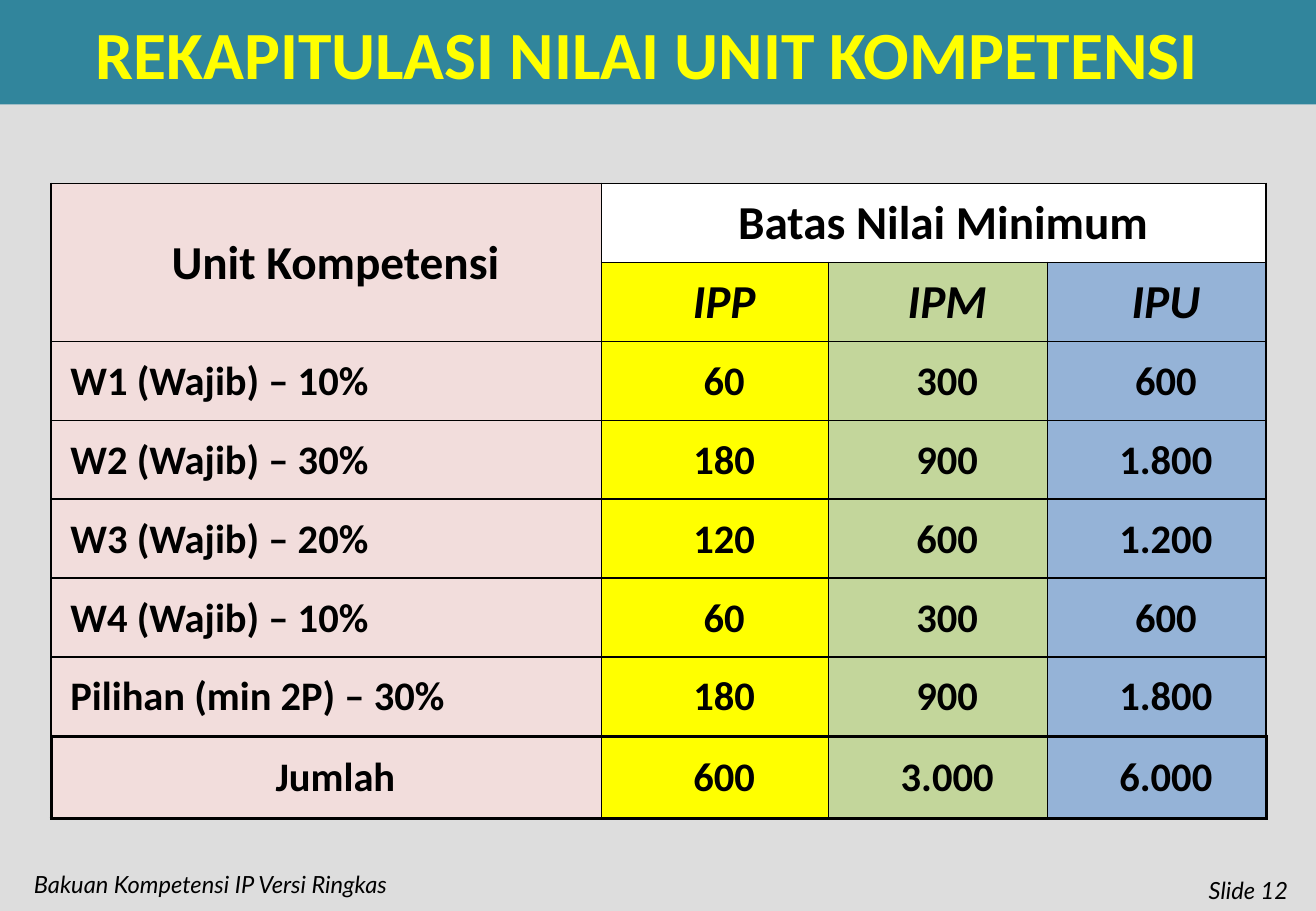
from lxml import etree
from pptx import Presentation
from pptx import util as u
from pptx.dml.color import RGBColor
from pptx.enum import shapes, text
from pptx.oxml.ns import qn

PX = 9144  # EMU per px, 100 px to the inch
COLORS = {
    "page": "DDDDDD", "band": "31859C", "title": "FFFF00", "ink": "000000",
    "unit": "F2DDDC", "head": "FFFFFF", "ipp": "FFFF00", "ipm": "C3D69B", "ipu": "95B3D7",
}
COL_COLORS = ["unit", "ipp", "ipm", "ipu"]
COL_WIDTHS = [453, 187, 180, 180]
ROW_HEIGHTS = [65] * 7 + [68]
ROWS = [
    ["Unit Kompetensi", "Batas Nilai Minimum", "", ""],
    ["", "IPP", "IPM", "IPU"],
    ["W1 (Wajib) – 10%", "60", "300", "600"],
    ["W2 (Wajib) – 30%", "180", "900", "1.800"],
    ["W3 (Wajib) – 20%", "120", "600", "1.200"],
    ["W4 (Wajib) – 10%", "60", "300", "600"],
    ["Pilihan (min 2P) – 30%", "180", "900", "1.800"],
    ["Jumlah", "600", "3.000", "6.000"],
]
HEAD_ROWS = 2
ALIGN = text.PP_ALIGN


def px(*values):
    return [u.Emu(v * PX) for v in values]


def rgb(name):
    return RGBColor.from_string(COLORS[name])


def write(tf, words, size, font, color="ink", align=ALIGN.LEFT, bold=False, italic=False):
    tf.text = words
    tf.word_wrap = True
    p = tf.paragraphs[0]
    p.alignment = align
    for r in p.runs:
        f = r.font
        f.size, f.name, f.bold, f.italic = u.Pt(size), font, bold, italic
        f.color.rgb = rgb(color)


def add_title(slide, box):
    x, y, w, h = box
    # Band
    sp = slide.shapes.add_shape(shapes.MSO_SHAPE.RECTANGLE, *px(x, y, w, h))
    sp.shadow.inherit = False
    sp.fill.solid()
    sp.fill.fore_color.rgb = rgb("band")
    sp.line.fill.background()
    # Heading
    tb = slide.shapes.add_textbox(*px(x + 69, y + 5, 953, h - 9))
    write(tb.text_frame, "REKAPITULASI NILAI UNIT KOMPETENSI", 40, "Calibri", "title", bold=True)


def set_borders(cell, widths):
    tc_pr = cell._tc.get_or_add_tcPr()
    for side in "LRTB":
        ln = etree.SubElement(tc_pr, qn(f"a:ln{side}"), w=str(u.Pt(widths[side])))
        fill = etree.SubElement(ln, qn("a:solidFill"))
        etree.SubElement(fill, qn("a:srgbClr"), val=COLORS["ink"])


def border_widths(row, col):
    total = len(ROWS) - 1
    return {
        "L": 2 if row == total and col == 0 else 1,
        "R": 2 if row == total and col == len(COL_WIDTHS) - 1 else 1,
        "T": 2 if row == total else 1,
        "B": 2 if row >= total - 1 else 1,
    }


def add_scores(slide, box):
    table = slide.shapes.add_table(len(ROWS), len(COL_WIDTHS), *px(*box)).table
    table.first_row = table.horz_banding = False
    for column, width in zip(table.columns, px(*COL_WIDTHS)):
        column.width = width
    for row, height in zip(table.rows, px(*ROW_HEIGHTS)):
        row.height = height

    # Cells
    for i, words in enumerate(ROWS):
        for j, word in enumerate(words):
            cell = table.cell(i, j)
            set_borders(cell, border_widths(i, j))
            cell.fill.solid()
            cell.fill.fore_color.rgb = rgb("head" if i == 0 and j else COL_COLORS[j])
            cell.vertical_anchor = text.MSO_ANCHOR.MIDDLE
            cell.margin_left, cell.margin_right, cell.margin_top, cell.margin_bottom = px(16, 1, 1, 0)
            is_label = j == 0 and HEAD_ROWS <= i < len(ROWS) - 1
            write(cell.text_frame, word, 28 if i < HEAD_ROWS else 24, "Calibri",
                  align=ALIGN.JUSTIFY if is_label else ALIGN.CENTER,
                  bold=True, italic=i == 1)

    # Merged headings
    table.cell(0, 0).merge(table.cell(1, 0))
    table.cell(0, 1).merge(table.cell(0, 3))


def add_footer(slide, box):
    x, y, w, h = box
    notes = [
        ("Bakuan Kompetensi IP Versi Ringkas", x, y, 375, ALIGN.LEFT),
        ("Slide 12", x + w - 153, y + 5, 153, ALIGN.RIGHT),
    ]
    for words, left, top, width, align in notes:
        tb = slide.shapes.add_textbox(*px(left, top, width, h))
        write(tb.text_frame, words, 14, "Lato", align=align, italic=True)


def main():
    prs = Presentation()
    prs.slide_width, prs.slide_height = px(1083, 750)
    slide = prs.slides.add_slide(prs.slide_layouts[6])
    slide.background.fill.solid()
    slide.background.fill.fore_color.rgb = rgb("page")

    add_title(slide, (0, 0, 1083, 86))
    add_scores(slide, (42, 151, sum(COL_WIDTHS), sum(ROW_HEIGHTS)))
    add_footer(slide, (18, 711, 1052, 50))
    prs.save("out.pptx")


if __name__ == "__main__":
    main()
